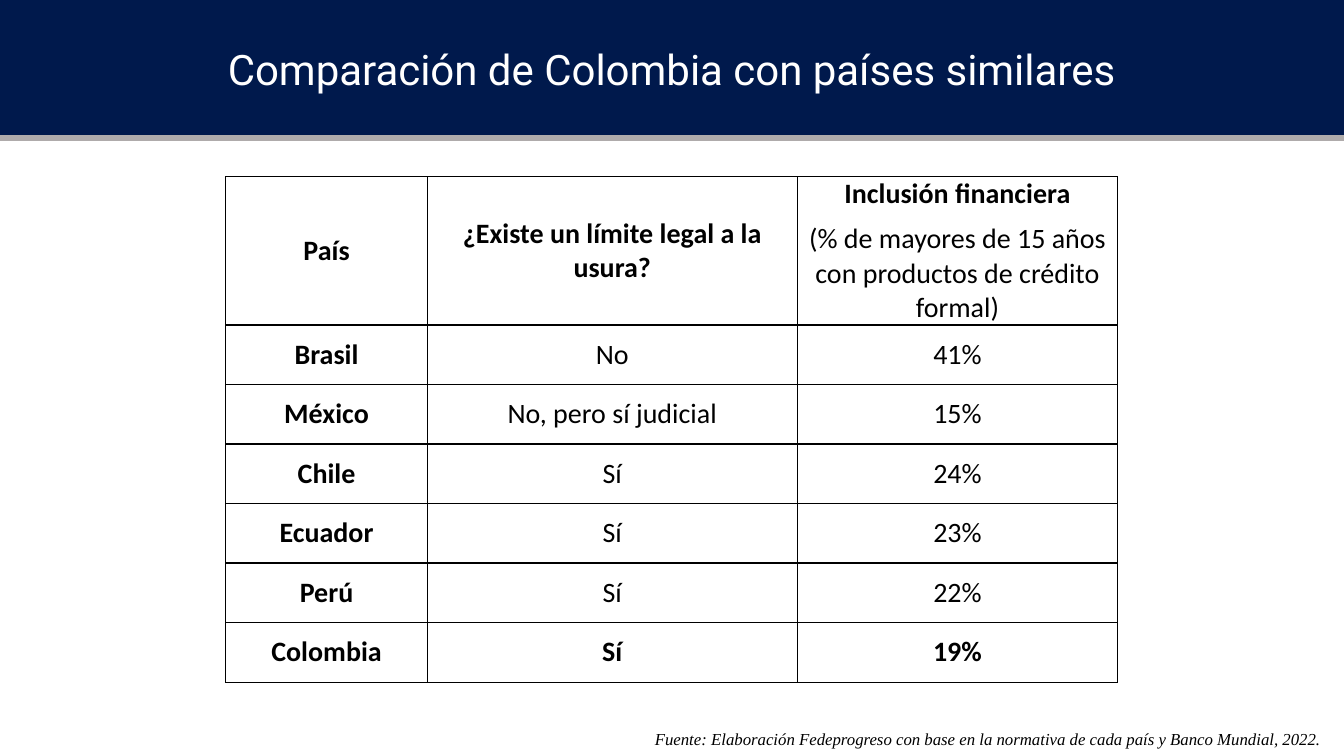
from lxml import etree
from pptx import Presentation
from pptx.dml.color import RGBColor
from pptx.enum.shapes import MSO_CONNECTOR
from pptx.enum.text import MSO_ANCHOR, MSO_AUTO_SIZE, PP_ALIGN
from pptx.oxml.ns import qn
from pptx.util import Cm, Pt

NAVY = RGBColor(0x00, 0x19, 0x4C)
GREY = RGBColor(0xAF, 0xAB, 0xAB)
WHITE = RGBColor(0xFF, 0xFF, 0xFF)
BLACK = RGBColor(0x00, 0x00, 0x00)
CENTER = PP_ALIGN.CENTER
MIDDLE = MSO_ANCHOR.MIDDLE
GROW = MSO_AUTO_SIZE.SHAPE_TO_FIT_TEXT
NO_FIT = MSO_AUTO_SIZE.NONE
STRAIGHT = MSO_CONNECTOR.STRAIGHT
TITLE_ONLY = 5

WIDTH, HEIGHT = Cm(33.87), Cm(19.05)
BAND = Cm(3.48)
COLS = [Cm(5.08), Cm(9.32), Cm(8.08)]
HEAD_ROW, ROW = Cm(3.45), Cm(1.5)

HEADS = ["País", "¿Existe un límite legal a la usura?", "Inclusión financiera"]
DETAIL = "(% de mayores de 15 años con productos de crédito formal)"
ROWS = [
    ("Brasil", "No", "41%"),
    ("México", "No, pero sí judicial", "15%"),
    ("Chile", "Sí", "24%"),
    ("Ecuador", "Sí", "23%"),
    ("Perú", "Sí", "22%"),
    ("Colombia", "Sí", "19%"),
]
FOCUS = "Colombia"
SOURCE = ("Fuente: Elaboración Fedeprogreso con base en la normativa "
          "de cada país y Banco Mundial, 2022.")


def write(para, text, size=20, font="Calibri", color=BLACK, bold=False,
          italic=False, after=8, lines=1.0):
    para.alignment = CENTER
    para.space_before = Pt(0)
    para.space_after = Pt(after)
    para.line_spacing = lines
    run = para.add_run()
    run.text = text
    run.font.size = Pt(size)
    run.font.name = font
    run.font.color.rgb = color
    run.font.bold = bold
    run.font.italic = italic


def add_title(slide):
    title = slide.shapes.title
    title.left, title.top, title.width, title.height = 0, 0, WIDTH, BAND
    title.fill.solid()
    title.fill.fore_color.rgb = NAVY
    frame = title.text_frame
    frame.auto_size = NO_FIT
    frame.vertical_anchor = MIDDLE
    write(frame.paragraphs[0], "Comparación de Colombia con países similares",
          size=30, font="Roboto", color=WHITE, after=0)


def add_rule(slide):
    rule = slide.shapes.add_connector(STRAIGHT, 0, BAND, WIDTH, BAND)
    rule.line.color.rgb = GREY
    rule.line.width = Pt(4.5)
    etree.SubElement(rule._element.spPr, qn("a:effectLst"))


def frame_cell(cell):
    """Give the cell black borders, no fill and no margins."""
    props = cell._tc.get_or_add_tcPr()
    for side in ("a:lnL", "a:lnR", "a:lnT", "a:lnB"):
        edge = etree.SubElement(props, qn(side), w=str(Pt(1)))
        fill = etree.SubElement(edge, qn("a:solidFill"))
        etree.SubElement(fill, qn("a:srgbClr"), val=str(BLACK))
    cell.fill.background()
    cell.vertical_anchor = MIDDLE
    cell.margin_left = cell.margin_right = 0
    cell.margin_top = cell.margin_bottom = 0


def add_grid(slide):
    data = [HEADS, *ROWS]
    table = slide.shapes.add_table(
        len(data), len(COLS), Cm(5.69), Cm(4.45),
        sum(COLS), HEAD_ROW + ROW * len(ROWS)).table
    table.first_row = table.horz_banding = False
    for col, width in zip(table.columns, COLS):
        col.width = width
    for r, texts in enumerate(data):
        table.rows[r].height = ROW if r else HEAD_ROW
        for c, text in enumerate(texts):
            cell = table.cell(r, c)
            frame_cell(cell)
            bold = r == 0 or c == 0 or texts[0] == FOCUS
            write(cell.text_frame.paragraphs[0], text, bold=bold)
    write(table.cell(0, 2).text_frame.add_paragraph(), DETAIL)


def add_source(slide):
    box = slide.shapes.add_textbox(Cm(15.95), Cm(17.98), Cm(17.91), Cm(0.94))
    frame = box.text_frame
    frame.word_wrap = True
    frame.auto_size = GROW
    write(frame.paragraphs[0], SOURCE, size=12, font="Times New Roman",
          italic=True, lines=1.5)


def main():
    deck = Presentation()
    deck.slide_width, deck.slide_height = WIDTH, HEIGHT
    slide = deck.slides.add_slide(deck.slide_layouts[TITLE_ONLY])
    add_title(slide)
    add_rule(slide)
    add_grid(slide)
    add_source(slide)
    deck.save("out.pptx")


if __name__ == "__main__":
    main()
